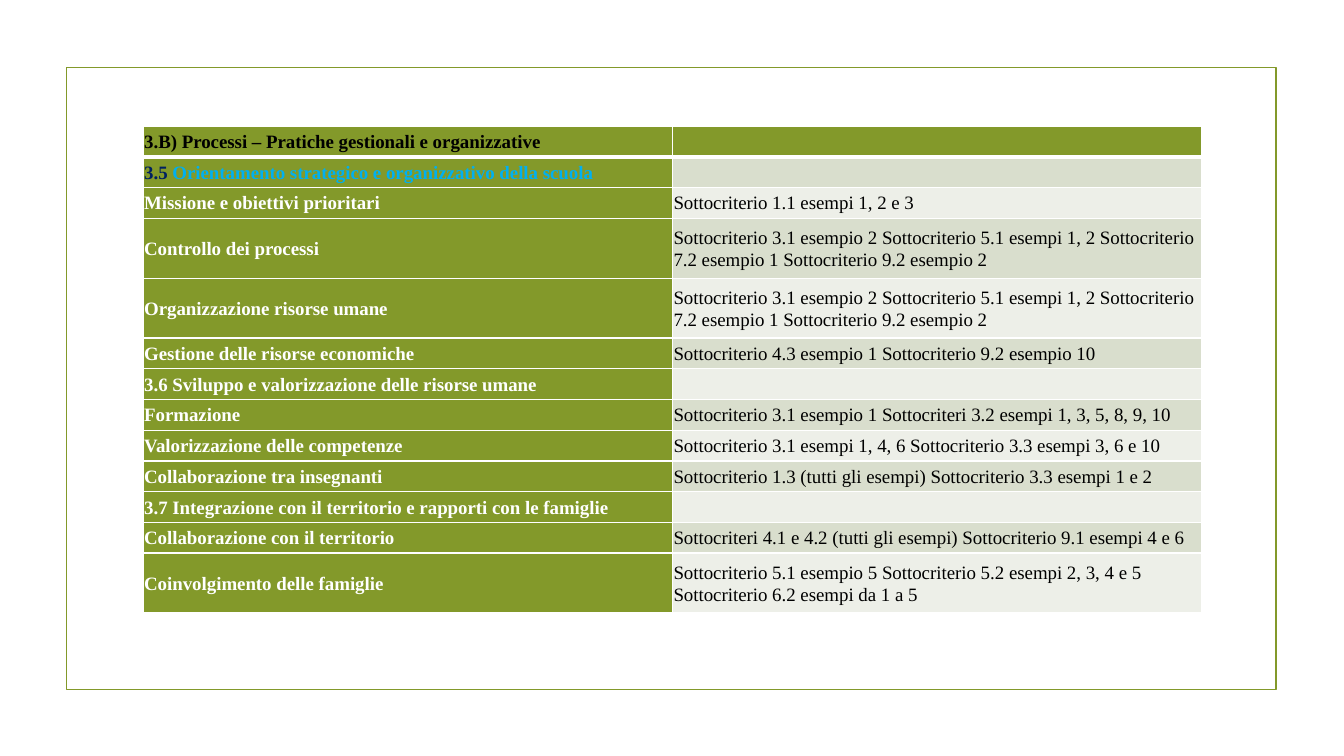
from lxml.etree import SubElement
from pptx import Presentation
from pptx.dml.color import RGBColor
from pptx.enum.shapes import MSO_SHAPE as Shape
from pptx.enum.text import MSO_ANCHOR as Anchor
from pptx.oxml.ns import qn
from pptx.util import Inches, Pt

GREEN = RGBColor(0x83, 0x99, 0x2A)
BAND_DARK = RGBColor(0xD9, 0xDE, 0xCD)
BAND_LIGHT = RGBColor(0xED, 0xEF, 0xE8)
WHITE = RGBColor(0xFF, 0xFF, 0xFF)
BLACK = RGBColor(0, 0, 0)
NAVY = RGBColor(0x00, 0x20, 0x60)
SKY = RGBColor(0x00, 0xB0, 0xF0)

ROW, TALL_ROW = 0.305, 0.595
COL = 5.25
CONTROLS = ("Sottocriterio 3.1 esempio 2 Sottocriterio 5.1 esempi 1, 2 "
            "Sottocriterio 7.2 esempio 1 Sottocriterio 9.2 esempio 2")

# Left text, right text, row height
ROWS = [
    ("3.B) Processi – Pratiche gestionali e organizzative", "", ROW),
    ("3.5 Orientamento strategico e organizzativo della scuola", "", ROW),
    ("Missione e obiettivi prioritari", "Sottocriterio 1.1 esempi 1, 2 e 3", ROW),
    ("Controllo dei processi", CONTROLS, TALL_ROW),
    ("Organizzazione risorse umane", CONTROLS, TALL_ROW),
    ("Gestione delle risorse economiche",
     "Sottocriterio 4.3 esempio 1 Sottocriterio 9.2 esempio 10", ROW),
    ("3.6 Sviluppo e valorizzazione delle risorse umane", "", ROW),
    ("Formazione",
     "Sottocriterio 3.1 esempio 1 Sottocriteri 3.2 esempi 1, 3, 5, 8, 9, 10", ROW),
    ("Valorizzazione delle competenze",
     "Sottocriterio 3.1 esempi 1, 4, 6 Sottocriterio 3.3 esempi 3, 6 e 10", ROW),
    ("Collaborazione tra insegnanti",
     "Sottocriterio 1.3 (tutti gli esempi) Sottocriterio 3.3 esempi 1 e 2", ROW),
    ("3.7 Integrazione con il territorio e rapporti con le famiglie", "", ROW),
    ("Collaborazione con il territorio",
     "Sottocriteri 4.1 e 4.2 (tutti gli esempi) Sottocriterio 9.1 esempi 4 e 6", ROW),
    ("Coinvolgimento delle famiglie",
     "Sottocriterio 5.1 esempio 5 Sottocriterio 5.2 esempi 2, 3, 4 e 5 "
     "Sottocriterio 6.2 esempi da 1 a 5", TALL_ROW),
]


def set_borders(cell, bottom):
    """White lines round a cell; they must come before its fill."""
    tc_pr = cell._tc.get_or_add_tcPr()
    for side, width in (("L", 1), ("R", 1), ("T", 1), ("B", bottom)):
        ln = SubElement(tc_pr, qn(f"a:ln{side}"), w=str(Pt(width)))
        fill = SubElement(ln, qn("a:solidFill"))
        SubElement(fill, qn("a:srgbClr"), val=str(WHITE))


prs = Presentation()
prs.slide_width, prs.slide_height = Inches(13.33), Inches(7.5)
s = prs.slides.add_slide(prs.slide_layouts[6])

# Frame
frame = s.shapes.add_shape(Shape.RECTANGLE, Inches(0.66), Inches(0.67),
                           Inches(12), Inches(6.17))
frame.shadow.inherit = False
frame.fill.background()
frame.line.color.rgb = GREEN
frame.line.width = Pt(1.25)

# Table
height = sum(row[2] for row in ROWS)
table = s.shapes.add_table(len(ROWS), 2, Inches(1.42), Inches(1.25),
                           Inches(2 * COL), Inches(height)).table
for i, (*texts, row_height) in enumerate(ROWS):
    table.rows[i].height = Inches(row_height)
    for j, text in enumerate(texts):
        cell = table.cell(i, j)
        set_borders(cell, 3 if i == 0 else 1)
        cell.fill.solid()
        band = BAND_DARK if i % 2 else BAND_LIGHT
        cell.fill.fore_color.rgb = GREEN if i == 0 or j == 0 else band
        cell.vertical_anchor = Anchor.MIDDLE
        cell.margin_left = cell.margin_right = Inches(0.01)
        cell.margin_top = cell.margin_bottom = Inches(0.01)

        p = cell.text_frame.paragraphs[0]
        p.line_spacing = 1.07
        p.font.name = "Times New Roman"
        p.font.size = Pt(13.5)
        p.font.bold = j == 0
        if i == 1 and j == 0:
            # Section number and title differ in colour
            number, title = text.split(" ", 1)
            for part, color in ((number + " ", NAVY), (title, SKY)):
                r = p.add_run()
                r.text = part
                r.font.color.rgb = color
        elif text:
            p.add_run().text = text
            p.font.color.rgb = BLACK if i == 0 or j == 1 else WHITE

prs.save("out.pptx")
